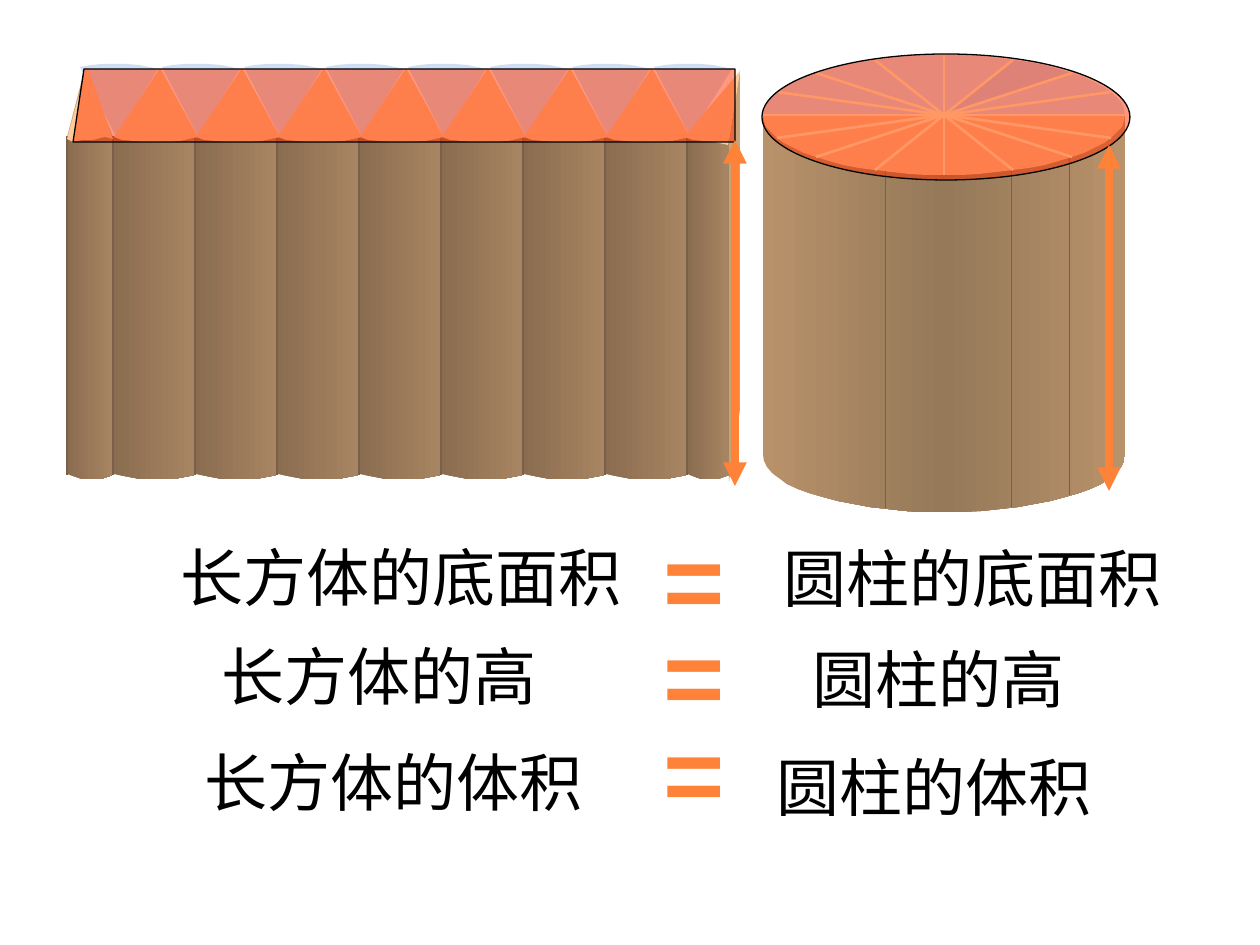
"""Build a slide comparing a cuboid of rearranged slices with its source cylinder."""
from dataclasses import dataclass
from math import cos, radians, sin
from typing import Any, Optional

from pptx import Presentation
from pptx.dml.color import RGBColor
from pptx.enum.shapes import MSO_CONNECTOR, MSO_SHAPE
from pptx.enum.text import MSO_AUTO_SIZE, PP_ALIGN
from pptx.oxml.ns import qn
from pptx.util import Emu, Inches, Pt

PX = 914400 / 126
BLACK = RGBColor(0x00, 0x00, 0x00)
ORANGE = RGBColor(0xFE, 0x82, 0x38)
RED = RGBColor(0xFF, 0x33, 0x00)
PEACH = RGBColor(0xFF, 0xCC, 0x99)
SKY = RGBColor(0xCF, 0xDE, 0xF3)
DEEP_SKY = RGBColor(0xBE, 0xD1, 0xEE)
CREAM = RGBColor(0xFF, 0xFF, 0xCC)
WALL_DARK = RGBColor(0x8A, 0x6C, 0x50)
WALL_MID = RGBColor(0x95, 0x79, 0x59)
WALL_LIGHT = RGBColor(0xA8, 0x85, 0x62)
WALL_EDGE = RGBColor(0xB8, 0x92, 0x6A)
WALL_SIDE = RGBColor(0xC9, 0xA2, 0x77)
SEAM = RGBColor(0x7A, 0x60, 0x48)

CENTER_X, CENTER_Y, RADIUS_X, RADIUS_Y = 944, 115, 181, 60
FLOOR_Y, FLOOR_RADIUS = 455, 57
SECTOR_ANGLE = 22.5
SLICE_STEP = 82

Point = tuple[int, int]


@dataclass(frozen=True)
class Label:
    """A piece of text with its box in px."""

    text: str
    left: int
    top: int
    width: int
    height: int
    size: int = 36
    font: str = "Noto Sans CJK SC"
    color: RGBColor = BLACK
    bold: bool = False
    centered: bool = True


LABELS = [
    Label("长方体的底面积", 144, 547, 514, 81),
    Label("圆柱的底面积", 753, 548, 440, 81),
    Label("长方体的高", 174, 646, 410, 81),
    Label("圆柱的高", 762, 649, 354, 81),
    Label("长方体的体积", 192, 737, 428, 88, centered=False),
    Label("圆柱的体积", 764, 742, 373, 88, centered=False),
] + [
    Label("=", 634, top, 120, 113, 60, "Arial", ORANGE, True)
    for top in (533, 629, 726)
]

BACK_ARC = [(-36, -69), (-25, -71), (-14, -72), (-1, -72), (11, -72),
            (23, -71), (33, -69), (42, -67)]
FRONT_ARC = [(-46, 69), (-38, 72), (-27, 73), (-17, 74), (-4, 74),
             (8, 74), (20, 73), (29, 71), (38, 69)]
LEFT_HALF = [(87, 66), (67, 139), (69, 140), (73, 142), (83, 140),
             (93, 140), (105, 137), (113, 139)]
RIGHT_HALF = [(740, 71), (684, 137), (693, 140), (703, 141), (714, 142),
              (728, 145)]


def px(length: float) -> Emu:
    """Turn px into EMU."""
    return Emu(round(length * PX))


def rim(angle: float, middle: int = CENTER_Y, radius: int = RADIUS_Y) -> Point:
    """Return the point of a cylinder rim at an angle in degrees."""
    turn = radians(angle)
    return (round(CENTER_X + RADIUS_X * cos(turn)),
            round(middle + radius * sin(turn)))


def draw_outline(shapes: Any, points: list[Point], color: RGBColor,
                 fade: Optional[RGBColor] = None) -> Any:
    """Draw a closed outline, plain or fading from left to right."""
    builder = shapes.build_freeform(*points[0], scale=PX)
    builder.add_line_segments(points[1:], close=True)
    outline = builder.convert_to_shape()
    outline.shadow.inherit = False
    outline.line.fill.background()
    if fade is None:
        outline.fill.solid()
        outline.fill.fore_color.rgb = color
    else:
        outline.fill.gradient()
        outline.fill.gradient_angle = 0
        for stop, shade in zip(outline.fill.gradient_stops, (color, fade)):
            stop.color.rgb = shade
    return outline


def draw_line(shapes: Any, start: Point, end: Point, color: RGBColor,
              width: float, arrows: bool = False) -> None:
    """Draw a straight line, with arrowheads at both ends if wanted."""
    line = shapes.add_connector(
        MSO_CONNECTOR.STRAIGHT, *map(px, start + end))
    line.line.color.rgb = color
    line.line.width = Pt(width)
    properties = line._element.spPr
    properties.append(properties.makeelement(qn("a:effectLst"), {}))
    if arrows:
        stroke = line.line._get_or_add_ln()
        for tag in ("a:headEnd", "a:tailEnd"):
            stroke.append(stroke.makeelement(qn(tag), {"type": "triangle"}))


def tint_base(base: Any) -> None:
    """Give a base area its half-clear red fill and thin black line."""
    base.shadow.inherit = False
    base.fill.solid()
    base.fill.fore_color.rgb = RED
    color = base._element.spPr.find(qn("a:solidFill"))[0]
    color.append(color.makeelement(qn("a:alpha"), {"val": "50000"}))
    base.line.color.rgb = BLACK
    base.line.width = Pt(0.75)


def draw_cylinder(shapes: Any) -> None:
    """Draw the cylinder with its sixteen sectors."""
    group = shapes.add_group_shape().shapes
    for first, colors in ((90, (WALL_EDGE, WALL_MID)),
                          (0, (WALL_MID, WALL_EDGE))):
        floor = [rim(first + turn, FLOOR_Y, FLOOR_RADIUS)
                 for turn in range(0, 91, 6)]
        wall = [(floor[0][0], CENTER_Y), *floor, (floor[-1][0], CENTER_Y)]
        draw_outline(group, wall, *colors)
    for x, bottom in ((885, 508), (1011, 507), (1069, 495)):
        draw_line(group, (x, CENTER_Y), (x, bottom), SEAM, 0.5)
    for sector in range(16):
        arc = [rim((sector + part / 4) * SECTOR_ANGLE) for part in range(5)]
        color = PEACH if sector < 8 else DEEP_SKY if sector == 13 else SKY
        draw_outline(group, [(CENTER_X, CENTER_Y), *arc], color)
    for cut in range(8):
        angle = cut * SECTOR_ANGLE
        draw_line(group, rim(angle + 180), rim(angle), CREAM, 1.5)
    tint_base(shapes.add_shape(
        MSO_SHAPE.OVAL, px(762), px(54), px(368), px(126)))


def draw_cuboid(shapes: Any) -> None:
    """Draw the slices set side by side as a cuboid."""
    group = shapes.add_group_shape().shapes
    draw_outline(group, [(85, 68), (67, 137), (113, 137)], WALL_SIDE)
    draw_outline(group, [(740, 70), (729, 140), (729, 482), (740, 410)],
                 WALL_SIDE)
    edges = [67, *(113 + SLICE_STEP * column for column in range(8)), 729]
    for left, right in zip(edges, edges[1:]):
        width = right - left
        wall = [(left, 136), (right, 136), (right, 475),
                (left + width * 3 // 4, 479), (left + width // 3, 479),
                (left, 474)]
        draw_outline(group, wall, WALL_DARK, WALL_LIGHT)
        draw_line(group, (left, 136), (left, 475), SEAM, 1)
    for slot in range(8):
        apex = 116 + SLICE_STEP * slot
        draw_outline(group, [(apex, 136), *((apex + x, 136 + y)
                                            for x, y in BACK_ARC)], SKY)
    for slot in range(7):
        apex = 160 + SLICE_STEP * slot
        draw_outline(group, [(apex, 68), *((apex + x, 68 + y)
                                           for x, y in FRONT_ARC)], PEACH)
    for half in (LEFT_HALF, RIGHT_HALF):
        draw_outline(group, half, PEACH)
    tint_base(draw_outline(
        shapes, [(84, 69), (735, 69), (735, 142), (73, 142)], RED))


def draw_label(shapes: Any, label: Label) -> None:
    """Write one label."""
    box = shapes.add_textbox(px(label.left), px(label.top),
                             px(label.width), px(label.height))
    frame = box.text_frame
    frame.word_wrap = True
    frame.auto_size = MSO_AUTO_SIZE.SHAPE_TO_FIT_TEXT
    frame.text = label.text
    paragraph = frame.paragraphs[0]
    if label.centered:
        paragraph.alignment = PP_ALIGN.CENTER
        paragraph.line_spacing = 0.8
        indents = paragraph._p.get_or_add_pPr()
        indents.set("marL", str(Inches(0.38)))
        indents.set("indent", str(-Inches(0.38)))
    font = paragraph.runs[0].font
    font.size = Pt(label.size)
    font.bold = label.bold
    font.color.rgb = label.color
    font.name = label.font
    properties = paragraph.runs[0]._r.get_or_add_rPr()
    properties.append(
        properties.makeelement(qn("a:ea"), {"typeface": label.font}))


def main() -> None:
    """Build and save the slide."""
    deck = Presentation()
    deck.slide_width, deck.slide_height = Inches(10), Inches(7.5)
    shapes = deck.slides.add_slide(deck.slide_layouts[6]).shapes
    draw_cylinder(shapes)
    draw_cuboid(shapes)
    for x, top in ((735, 140), (1109, 145)):
        draw_line(shapes, (x, top), (x, top + 346), ORANGE, 4.5, arrows=True)
    for label in LABELS:
        draw_label(shapes, label)
    deck.save("out.pptx")


if __name__ == "__main__":
    main()
